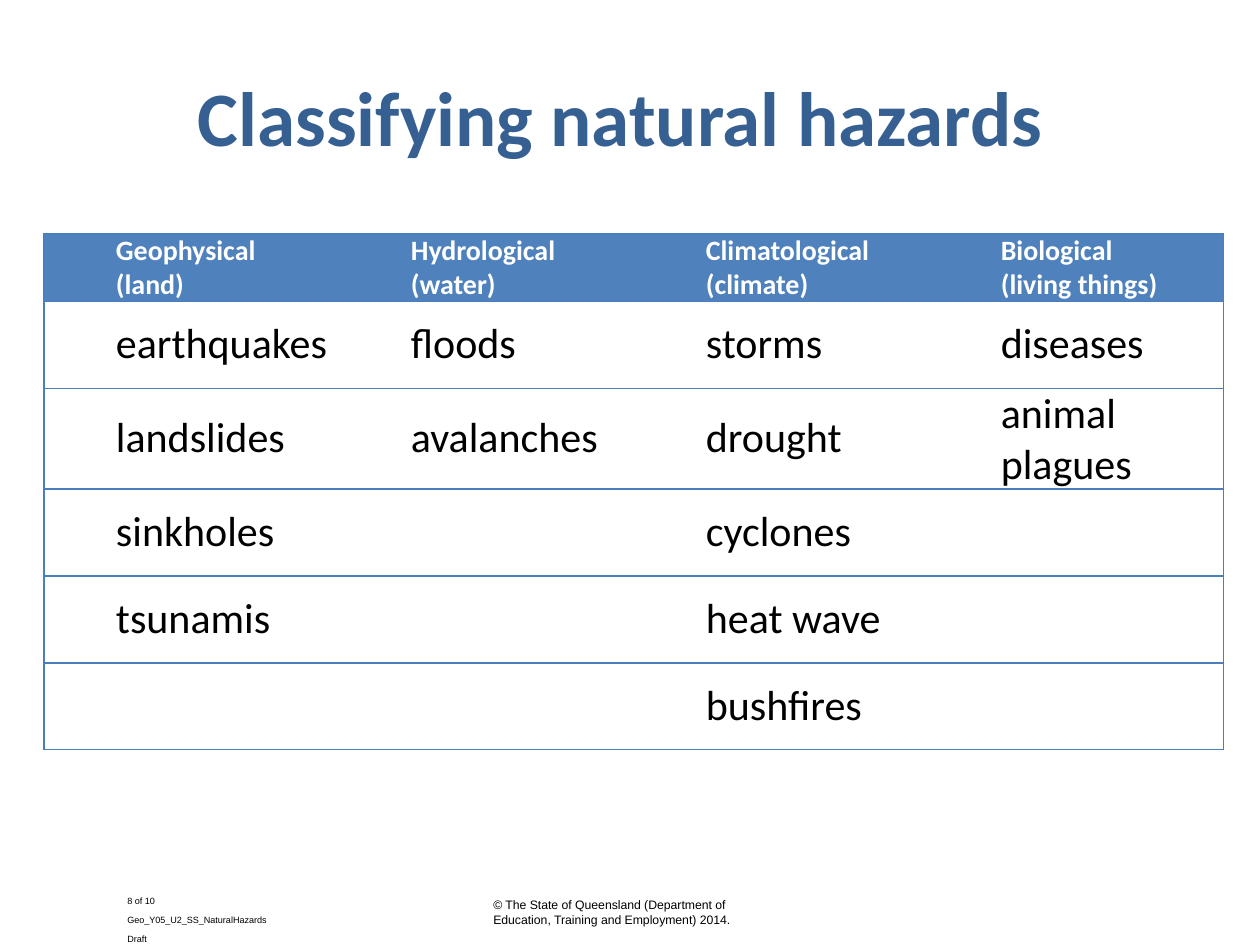
from lxml import etree
from pptx import Presentation
from pptx import util as u
from pptx.dml.color import RGBColor
from pptx.enum import text
from pptx.oxml import ns

TITLE = "Classifying natural hazards"
HAZARDS = {
    "Geophysical\n(land)": ["earthquakes", "landslides", "sinkholes", "tsunamis"],
    "Hydrological \n(water)": ["floods", "avalanches"],
    "Climatological \n(climate)": ["storms", "drought", "cyclones", "heat wave", "bushfires"],
    "Biological \n(living things)": ["diseases", "animal plagues"],
}
DOCUMENT_LINES = ["8 of 10", "Geo_Y05_U2_SS_NaturalHazards", "Draft"]
COPYRIGHT_LINES = [
    "© The State of Queensland (Department of",
    "Education, Training and Employment) 2014.",
]
COLORS = {"title": "376092", "header": "4F81BD", "border": "4B7EBC",
          "header_text": "FFFFFF", "text": "000000"}

TABLE_LEFT, TABLE_TOP = 44, 234
COLUMN_WIDTH, HEADER_HEIGHT, ROW_HEIGHT = 295, 59, 87
CELL_MARGIN, CELL_INDENT = 9, 63


def px(count):
    return u.Emu(count * 914400 // 126)


def set_font(paragraph, name, size, color, bold=False):
    font = paragraph.font
    font.name, font.size, font.bold = name, u.Pt(size), bold
    font.color.rgb = RGBColor.from_string(COLORS[color])


def set_borders(cell, visible):
    """Draw the sides named in visible (L, R, T, B) and clear the others."""
    properties = cell._tc.get_or_add_tcPr()
    for side in "LRTB":
        line = etree.SubElement(properties, ns.qn(f"a:ln{side}"), w=str(u.Pt(0.75)))
        if side in visible:
            fill = etree.SubElement(line, ns.qn("a:solidFill"))
            etree.SubElement(fill, ns.qn("a:srgbClr"), val=COLORS["border"])
        else:
            etree.SubElement(line, ns.qn("a:noFill"))


def add_footer(slide, lines, box, size, baseline=0):
    frame = slide.shapes.add_textbox(*map(px, box)).text_frame
    frame.word_wrap = True
    for index, line in enumerate(lines):
        paragraph = frame.add_paragraph() if index else frame.paragraphs[0]
        run = paragraph.add_run()
        run.text = line
        set_font(paragraph, "Arial", size, "text")
        if baseline:
            run.font._element.set("baseline", str(baseline * 1000))


def fill_cell(cell, wording, is_header, borders):
    cell.margin_left = cell.margin_right = px(CELL_MARGIN)
    cell.margin_top = cell.margin_bottom = 0
    set_borders(cell, borders)
    if is_header:
        cell.fill.solid()
        cell.fill.fore_color.rgb = RGBColor.from_string(COLORS["header"])
    else:
        cell.fill.background()
        cell.vertical_anchor = text.MSO_ANCHOR.MIDDLE
    if wording:
        paragraph = cell.text_frame.paragraphs[0]
        paragraph.text = wording
        paragraph._p.get_or_add_pPr().set("marL", str(px(CELL_INDENT)))
        if is_header:
            set_font(paragraph, "Calibri", 16, "header_text", bold=True)
        else:
            set_font(paragraph, "Calibri", 24, "text")


def add_hazard_table(slide):
    columns = len(HAZARDS)
    body_rows = max(map(len, HAZARDS.values()))
    table = slide.shapes.add_table(
        body_rows + 1, columns, px(TABLE_LEFT), px(TABLE_TOP),
        px(columns * COLUMN_WIDTH), px(HEADER_HEIGHT + body_rows * ROW_HEIGHT)).table
    table.horz_banding = False
    for index, row in enumerate(table.rows):
        row.height = px(ROW_HEIGHT if index else HEADER_HEIGHT)
    for column, (category, examples) in enumerate(HAZARDS.items()):
        table.columns[column].width = px(COLUMN_WIDTH)
        borders = "TB" + "L" * (column == 0) + "R" * (column == columns - 1)
        wordings = [category] + examples + [""] * (body_rows - len(examples))
        for row, wording in enumerate(wordings):
            fill_cell(table.cell(row, column), wording, row == 0, borders)


def main():
    deck = Presentation()
    deck.slide_width, deck.slide_height = u.Inches(10), u.Inches(7.5)
    slide = deck.slides.add_slide(deck.slide_layouts[5])

    add_footer(slide, DOCUMENT_LINES, (115, 887, 267, 50), 9, baseline=30)
    add_footer(slide, COPYRIGHT_LINES, (481, 891, 277, 43), 7)

    title = slide.shapes.title
    title.left, title.top, title.width, title.height = map(px, (54, 37, 1134, 158))
    title.text_frame.text = TITLE
    title.text_frame.vertical_anchor = text.MSO_ANCHOR.MIDDLE
    heading = title.text_frame.paragraphs[0]
    heading.alignment = text.PP_ALIGN.CENTER
    set_font(heading, "Calibri", 44, "title", bold=True)

    add_hazard_table(slide)
    deck.save("out.pptx")


if __name__ == "__main__":
    main()
